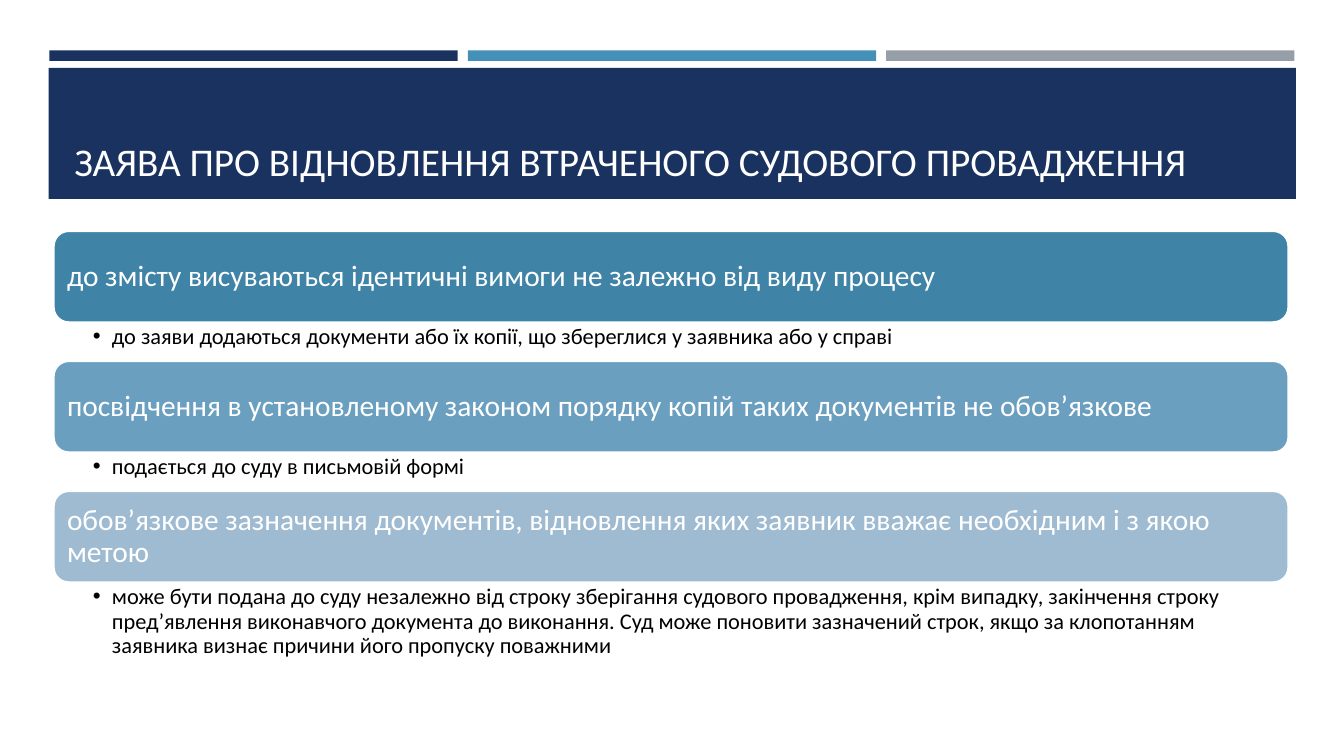
from lxml.etree import SubElement
from pptx import Presentation
from pptx.dml.color import RGBColor
from pptx.enum.shapes import MSO_SHAPE as Form
from pptx.enum.text import MSO_ANCHOR as Anchor, PP_ALIGN as Align
from pptx.oxml.ns import qn
from pptx.util import Inches, Pt

WIDE, HIGH = Inches(13.33), Inches(7.5)
NAVY, WHITE, BLACK = "1A3260", "FFFFFF", "000000"
BARS = [NAVY, "4590B8", "969FA7"]
TITLE = "ЗАЯВА ПРО ВІДНОВЛЕННЯ ВТРАЧЕНОГО СУДОВОГО ПРОВАДЖЕННЯ"
LEFT, SPAN = 3.98, 91.9
TOP, CARD, NOTE = 30.53, 12.13, 5.07
ITEMS = [
    ("3F83A7",
     "до змісту висуваються ідентичні вимоги не залежно від виду процесу",
     "до заяви додаються документи або їх копії, що збереглися у заявника або у справі",
     NOTE),
    ("6B9FC0",
     "посвідчення в установленому законом порядку копій таких документів не обов’язкове",
     "подається до суду в письмовій формі",
     NOTE),
    ("9FBBD1",
     "обов’язкове зазначення документів, відновлення яких заявник вважає необхідним і з якою метою",
     "може бути подана до суду незалежно від строку зберігання судового провадження, "
     "крім випадку, закінчення строку пред’явлення виконавчого документа до виконання. "
     "Суд може поновити зазначений строк, якщо за клопотанням заявника визнає причини "
     "його пропуску поважними",
     10.8),
]


def tint(code):
    """Turn a hex string into a colour."""
    return RGBColor.from_string(code)


def place(x, y, w, h):
    """Turn percent shares of the slide into lengths."""
    return [int(share * full / 100)
            for share, full in ((x, WIDE), (y, HIGH), (w, WIDE), (h, HIGH))]


def block(slide, form, area, fill):
    """Draw a flat filled shape."""
    shape = slide.shapes.add_shape(form, *place(*area))
    shape.shadow.inherit = False
    shape.fill.solid()
    shape.fill.fore_color.rgb = tint(fill)
    shape.line.fill.background()
    return shape


def write(shape, text, size, color, anchor, pads, gap=1.0):
    """Set and format the one paragraph of a shape."""
    frame = shape.text_frame
    frame.word_wrap = True
    frame.vertical_anchor = anchor
    (frame.margin_left, frame.margin_top,
     frame.margin_right, frame.margin_bottom) = map(Inches, pads)
    frame.text = text
    para = frame.paragraphs[0]
    para.alignment = Align.LEFT
    para.line_spacing = gap
    font = para.runs[0].font
    font.name, font.size = "Calibri", Pt(size)
    font.color.rgb = tint(color)
    return para


def card(slide, y, fill, text):
    """Draw a rounded card with its heading."""
    shape = block(slide, Form.ROUNDED_RECTANGLE, (LEFT, y, SPAN, CARD), fill)
    shape.line.color.rgb = tint(WHITE)
    shape.line.width = Pt(1.75)
    write(shape, text, 21, WHITE, Anchor.MIDDLE, [0.09] * 4, 0.9)


def note(slide, y, high, text):
    """Add a bulleted note under a card."""
    box = slide.shapes.add_textbox(*place(LEFT, y, SPAN, high))
    para = write(box, text, 16, BLACK, Anchor.TOP, (0.39, 0.03, 0.16, 0.03), 0.9)
    props = para._p.get_or_add_pPr()
    props.set("marL", str(Inches(0.19)))
    props.set("indent", str(-Inches(0.19)))
    SubElement(props, qn("a:buFont")).set("typeface", "Arial")
    SubElement(props, qn("a:buChar")).set("char", "•")


def header(slide):
    """Draw the three bars and the title band."""
    for col, fill in enumerate(BARS):
        block(slide, Form.RECTANGLE, (3.68 + col * 31.13, 6.67, 30.38, 1.4), fill)
    block(slide, Form.RECTANGLE, (3.63, 8.98, 92.8, 17.33), NAVY)
    box = slide.shapes.add_textbox(*place(4.8, 10.27, 90.47, 14.8))
    write(box, TITLE, 28, WHITE, Anchor.BOTTOM, (0.1, 0.05, 0.1, 0.05))


def main():
    """Build the slide and save it."""
    deck = Presentation()
    deck.slide_width, deck.slide_height = WIDE, HIGH
    slide = deck.slides.add_slide(deck.slide_layouts[6])
    header(slide)
    for row, (fill, head, text, high) in enumerate(ITEMS):
        y = TOP + row * (CARD + NOTE)
        card(slide, y, fill, head)
        note(slide, y + CARD, high, text)
    deck.save("out.pptx")


if __name__ == "__main__":
    main()
